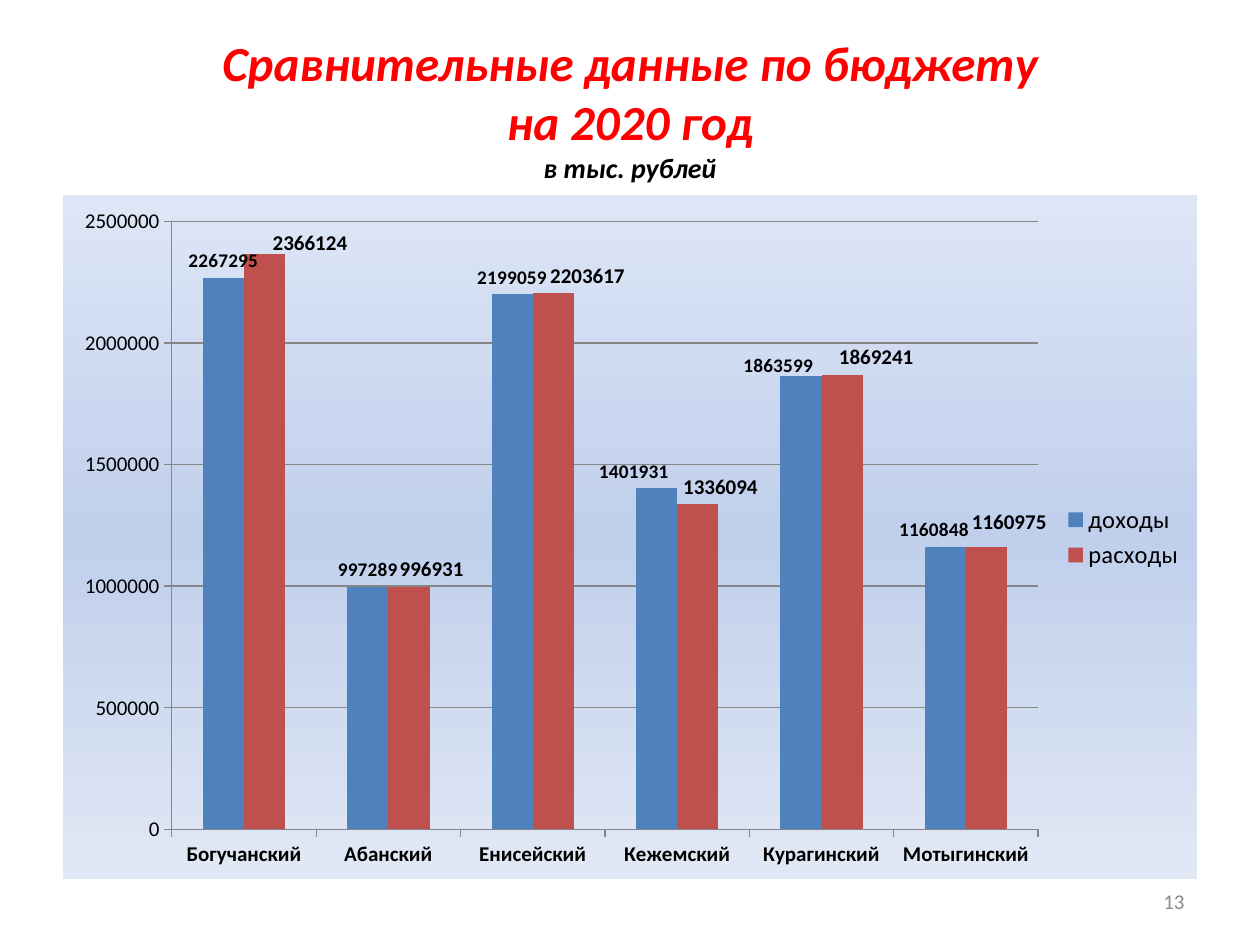
from lxml import etree
from pptx import Presentation
from pptx.chart.data import CategoryChartData
from pptx.dml.color import RGBColor
from pptx.enum import chart as ch, text
from pptx.oxml import parse_xml
from pptx.oxml.ns import nsdecls, qn
from pptx.util import Inches, Pt

HUES = {"title": "FF0000", "text": "000000", "page": "8C8C8C", "grid": "868686",
        "income": "4F81BD", "spend": "C0504D",
        "top": "DDE6F6", "mid": "C0CFEC", "low": "E1E8F5"}
FACE = "Calibri"
AREAS = ["Богучанский", "Абанский", "Енисейский", "Кежемский", "Курагинский", "Мотыгинский"]

# Name, colour, label size, values, label shifts as shares of the chart
ROWS = [
    ("доходы", "income", 11,
     [2267295, 997289, 2199059, 1401931, 1863599, 1160848],
     {3: (-0.02, 0), 4: (-0.02, 0.01), 5: (-0.01, 0)}),
    ("расходы", "spend", 12,
     [2366124, 996931, 2203617, 1336094, 1869241, 1160975],
     {0: (0.04, 0.01), 1: (0.02, 0), 2: (0.03, 0),
      3: (0.02, 0), 4: (0.03, 0), 5: (0.02, -0.01)}),
]


def layout(x, y, size=None):
    """Manual chart layout; with a size it places the inner plot."""
    node = parse_xml(f"<c:layout {nsdecls('c')}><c:manualLayout/></c:layout>")
    parts = [("x", x), ("y", y)]
    if size:
        parts = [("layoutTarget", "inner"), ("xMode", "edge"), ("yMode", "edge"),
                 *parts, ("w", size[0]), ("h", size[1])]
    for name, val in parts:
        etree.SubElement(node[0], qn(f"c:{name}")).set("val", str(val))
    return node


class Deck:
    def __init__(self):
        self.prs = Presentation()
        self.prs.slide_width, self.prs.slide_height = Inches(10), Inches(7.5)
        self.slide = self.prs.slides.add_slide(self.prs.slide_layouts[5])

    def hue(self, name):
        return RGBColor.from_string(HUES[name])

    def font(self, font, size, hue="text", bold=False, slant=False):
        font.name, font.size = FACE, Pt(size)
        font.bold, font.italic = bold, slant
        font.color.rgb = self.hue(hue)

    def title(self, lines, box):
        shape = self.slide.shapes.title
        shape.left, shape.top, shape.width, shape.height = map(Inches, box)
        frame = shape.text_frame
        frame.auto_size = text.MSO_AUTO_SIZE.NONE
        frame.vertical_anchor = text.MSO_ANCHOR.MIDDLE
        frame.margin_bottom = Inches(0.47)
        para = frame.paragraphs[0]
        para.alignment = text.PP_ALIGN.CENTER
        for i, (words, size, hue) in enumerate(lines):
            if i:
                para.add_line_break()
            run = para.add_run()
            run.text = words
            self.font(run.font, size, hue, True, True)

    def note(self, words, box):
        frame = self.slide.shapes.add_textbox(*map(Inches, box)).text_frame
        frame.word_wrap = True
        frame.vertical_anchor = text.MSO_ANCHOR.MIDDLE
        para = frame.paragraphs[0]
        para.text = words
        para.alignment = text.PP_ALIGN.RIGHT
        self.font(para.font, 12, "page")

    def axis(self, axis, bold):
        self.font(axis.tick_labels.font, 12, bold=bold)
        axis.major_tick_mark = ch.XL_TICK_MARK.OUTSIDE
        axis.format.line.color.rgb = self.hue("grid")
        axis.format.line.width = Pt(0.75)

    def marks(self, row, size, shifts):
        """Value labels above the bars, some of them moved."""
        labels = row.data_labels
        labels.show_value = True
        labels.position = ch.XL_LABEL_POSITION.OUTSIDE_END
        self.font(labels.font, size, bold=True)
        for i in shifts:
            label = row.points[i].data_label
            self.font(label.font, size, bold=True)
            label.position = ch.XL_LABEL_POSITION.OUTSIDE_END

    def chart(self, box):
        data = CategoryChartData(number_format="0")
        data.categories = AREAS
        for name, _, _, vals, _ in ROWS:
            data.add_series(name, vals)
        chart = self.slide.shapes.add_chart(
            ch.XL_CHART_TYPE.COLUMN_CLUSTERED, *map(Inches, box), data).chart
        self.font(chart.font, 18)
        chart.has_title = False
        chart.has_legend = True
        chart.legend.position = ch.XL_LEGEND_POSITION.RIGHT
        chart.legend.include_in_layout = False
        self.font(chart.legend.font, 14)

        # Axes
        self.axis(chart.category_axis, True)
        scale = chart.value_axis
        self.axis(scale, False)
        scale.minimum_scale, scale.maximum_scale, scale.major_unit = 0, 2500000, 500000
        scale.has_major_gridlines = True
        scale.major_gridlines.format.line.color.rgb = self.hue("grid")

        # Bars and labels
        plot = chart.plots[0]
        plot.gap_width, plot.overlap, plot.vary_by_categories = 150, 0, False
        root = chart.element
        for row, (_, hue, size, _, shifts) in zip(plot.series, ROWS):
            row.format.fill.solid()
            row.format.fill.fore_color.rgb = self.hue(hue)
            self.marks(row, size, shifts)
        for ser, (*_, shifts) in zip(root.xpath(".//c:ser"), ROWS):
            for idx in ser.xpath("./c:dLbls/c:dLbl/c:idx"):
                idx.addnext(layout(*shifts[int(idx.get("val"))]))

        # Plot place and backdrop
        area = root.xpath(".//c:plotArea")[0]
        for old in area.findall(qn("c:layout")):
            area.remove(old)
        area.insert(0, layout(0.096, 0.038, (0.764, 0.889)))
        stops = "".join(f'<a:gs pos="{pos}"><a:srgbClr val="{HUES[name]}"/></a:gs>'
                        for pos, name in ((0, "top"), (50000, "mid"), (100000, "low")))
        root.find(qn("c:chart")).addnext(parse_xml(
            f'<c:spPr {nsdecls("c", "a")}><a:gradFill><a:gsLst>{stops}</a:gsLst>'
            '<a:lin ang="5400000" scaled="0"/></a:gradFill><a:ln><a:noFill/></a:ln></c:spPr>'))


def main():
    deck = Deck()
    deck.title([("Сравнительные данные по бюджету", 28, "title"),
                ("на 2020 год", 28, "title"),
                ("в тыс. рублей", 16, "text")], (0.5, 0.52, 9, 1.1))
    deck.chart((0.5, 1.55, 9, 5.43))
    deck.note("13", (7.17, 6.95, 2.33, 0.4))
    deck.prs.save("out.pptx")


if __name__ == "__main__":
    main()
